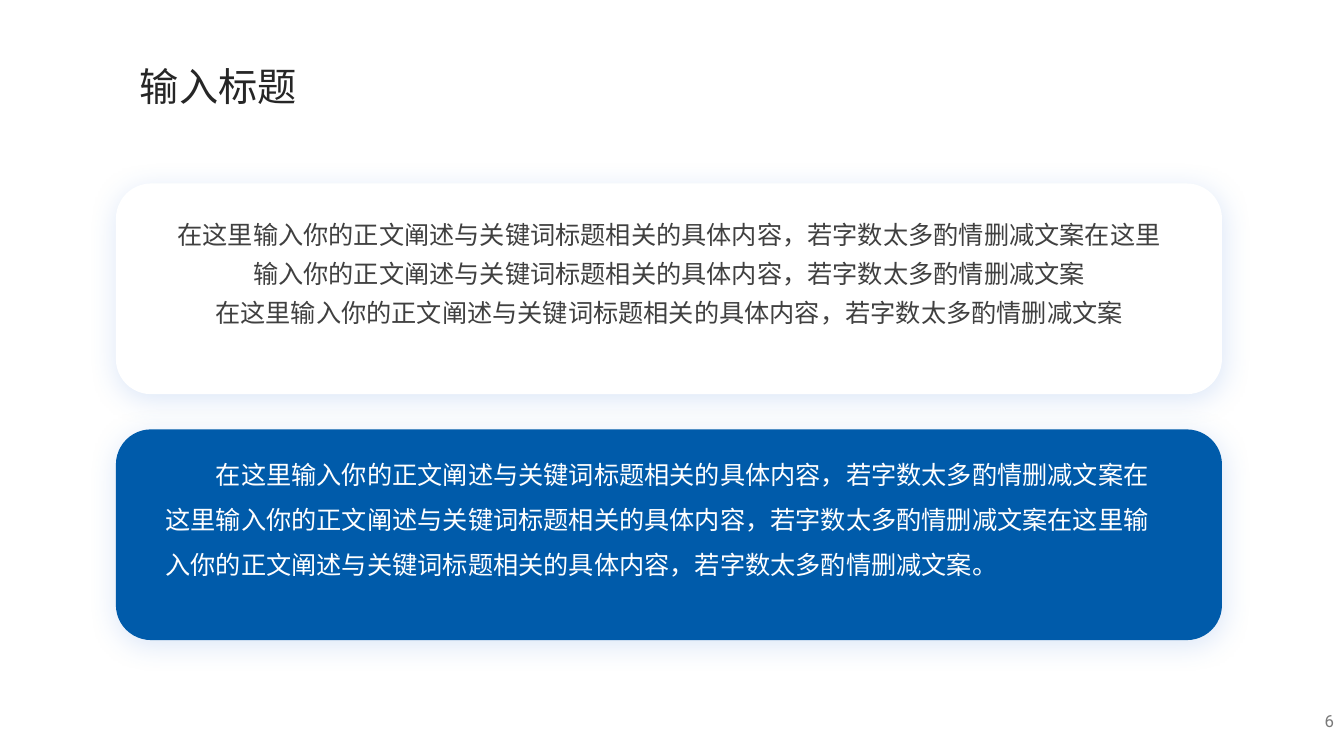
from lxml import etree
from pptx import Presentation
from pptx.dml.color import RGBColor
from pptx.enum import shapes, text
from pptx.oxml import ns
from pptx.util import Inches, Pt

WHITE = RGBColor(0xFF, 0xFF, 0xFF)
BLUE = RGBColor(0x00, 0x5B, 0xAA)
BODY_GREY = RGBColor(0x40, 0x40, 0x40)
TITLE_GREY = RGBColor(0x26, 0x26, 0x26)
NUMBER_GREY = RGBColor(0x79, 0x79, 0x79)
SHADOW_BLUE = RGBColor(0x53, 0x89, 0xDD)

CJK = "Noto Sans CJK SC"
SENTENCE = "在这里输入你的正文阐述与关键词标题相关的具体内容，若字数太多酌情删减文案"
CARD_LEFT, CARD_TOP, CARD_WIDTH, CARD_HEIGHT = 1.15, 1.82, 10.97, 2.09
CARD_STEP = 2.44


def apply(target, values):
    for name, value in values.items():
        setattr(target, name, value)


def write(frame, lines, color, size, font=CJK, indent=0, **para_format):
    for index, line in enumerate(lines):
        para = frame.paragraphs[0] if index == 0 else frame.add_paragraph()
        apply(para, para_format)
        if indent:
            para._p.get_or_add_pPr().set("indent", str(Inches(indent)))
        span = para.add_run()
        span.text = line
        apply(span.font, {"size": Pt(size), "name": font})
        span.font.color.rgb = color
        east_asian = etree.SubElement(span._r.get_or_add_rPr(), ns.qn("a:ea"))
        east_asian.set("typeface", font)


def add_soft_shadow(shape):
    shape.shadow.inherit = False
    effects = shape._element.spPr.find(ns.qn("a:effectLst"))
    shadow = etree.SubElement(
        effects, ns.qn("a:outerShdw"), blurRad=str(Pt(20)), dist=str(Pt(4)),
        dir=str(90 * 60000), algn="t", rotWithShape="0")
    color = etree.SubElement(shadow, ns.qn("a:srgbClr"), val=str(SHADOW_BLUE))
    etree.SubElement(color, ns.qn("a:alpha"), val="20000")


def add_card(page, box, fill, color, lines, bottom, **para_format):
    card = page.shapes.add_shape(
        shapes.MSO_SHAPE.ROUNDED_RECTANGLE, *map(Inches, box))
    card.fill.solid()
    card.fill.fore_color.rgb = fill
    card.line.fill.background()
    add_soft_shadow(card)
    apply(card.text_frame, {
        "word_wrap": True,
        "vertical_anchor": text.MSO_ANCHOR.MIDDLE,
        "margin_left": Inches(0.39),
        "margin_right": Inches(0.39),
        "margin_top": Inches(0.05),
        "margin_bottom": Inches(bottom),
    })
    write(card.text_frame, lines, color, 18, **para_format)


def add_title(page, box):
    title = page.shapes.add_textbox(*map(Inches, box))
    apply(title.text_frame, {
        "word_wrap": False,
        "auto_size": text.MSO_AUTO_SIZE.SHAPE_TO_FIT_TEXT,
    })
    write(title.text_frame, ["输入标题"], TITLE_GREY, 28)


def add_page_number(page, box):
    number = page.shapes.add_textbox(*map(Inches, box))
    apply(number.text_frame, {
        "word_wrap": True,
        "vertical_anchor": text.MSO_ANCHOR.MIDDLE,
    })
    write(number.text_frame, ["6"], NUMBER_GREY, 12, "Roboto",
          alignment=text.PP_ALIGN.RIGHT)


def main():
    deck = Presentation()
    apply(deck, {"slide_width": Inches(13.33), "slide_height": Inches(7.5)})
    page = deck.slides.add_slide(deck.slide_layouts[6])
    upper, lower = [
        (CARD_LEFT, CARD_TOP + row * CARD_STEP, CARD_WIDTH, CARD_HEIGHT)
        for row in range(2)]
    add_card(page, upper, WHITE, BODY_GREY, [SENTENCE * 2, SENTENCE], 0.44,
             alignment=text.PP_ALIGN.CENTER, line_spacing=1.3)
    add_card(page, lower, BLUE, WHITE, [SENTENCE * 3 + "。"], 0.5,
             alignment=text.PP_ALIGN.LEFT, line_spacing=1.5, indent=0.5)
    add_page_number(page, (10.33, 6.95, 3, 0.4))
    add_title(page, (1.29, 0.57, 1.77, 0.57))
    deck.save("out.pptx")


if __name__ == "__main__":
    main()
